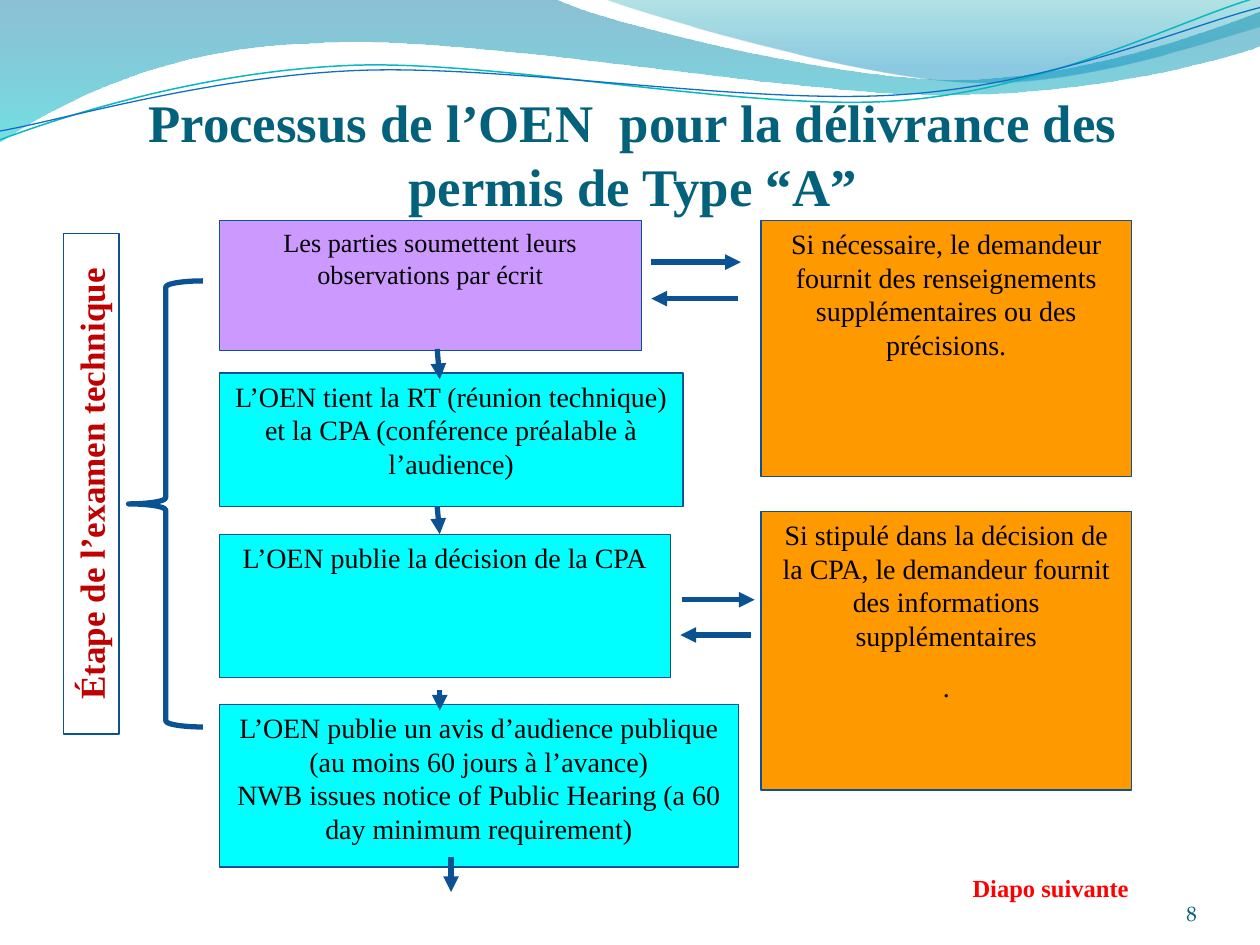
from lxml.etree import SubElement
from pptx import Presentation
from pptx.dml.color import RGBColor
from pptx.enum.shapes import MSO_CONNECTOR, MSO_SHAPE
from pptx.enum.text import MSO_ANCHOR, MSO_AUTO_SIZE, PP_ALIGN
from pptx.oxml.ns import qn
from pptx.util import Inches, Pt

BLUE = RGBColor(0x0B, 0x52, 0x92)
CYAN = RGBColor(0x00, 0xFF, 0xFF)
ORANGE = RGBColor(0xFF, 0x99, 0x00)
PURPLE = RGBColor(0xCC, 0x99, 0xFF)
BLACK = RGBColor(0x00, 0x00, 0x00)
RED = RGBColor(0xFF, 0x00, 0x00)
DARK_RED = RGBColor(0xC0, 0x00, 0x00)
TITLE_TEAL = RGBColor(0x04, 0x61, 0x7B)
NUMBER_TEAL = RGBColor(0x04, 0x5D, 0x75)
WAVE_TOP = RGBColor(0x00, 0x74, 0xA1)
WAVE_BOTTOM = RGBColor(0x00, 0xC6, 0xCF)
CREST_TOP = RGBColor(0x00, 0xA1, 0xA9)
CREST_BOTTOM = RGBColor(0x00, 0x8B, 0xBF)
CURVE_TEAL = RGBColor(0x0A, 0xB8, 0xBF)
CURVE_BLUE = RGBColor(0x0F, 0x6F, 0xC6)


def write(sp, text, size=16, color=BLACK, font="Times New Roman", bold=False,
          align=PP_ALIGN.CENTER, anchor=MSO_ANCHOR.TOP, margins=(0.1, 0.05, 0.1, 0.05),
          after=0):
    tf = sp.text_frame
    tf.word_wrap = True
    tf.auto_size = MSO_AUTO_SIZE.NONE
    tf.vertical_anchor = anchor
    tf.margin_left, tf.margin_top, tf.margin_right, tf.margin_bottom = map(Inches, margins)
    for i, line in enumerate(text.split("\n")):
        p = tf.add_paragraph() if i else tf.paragraphs[0]
        p.alignment = align
        p.space_after = Pt(after)
        r = p.add_run()
        r.text = line
        r.font.name, r.font.size, r.font.bold = font, Pt(size), bold
        r.font.color.rgb = color


def draw_curve(segments, closed):
    """Draw (x, y) points and (x1, y1, x2, y2, x, y) Béziers as one outline."""
    ends = [(Inches(seg[-2]), Inches(seg[-1])) for seg in segments]
    builder = s.shapes.build_freeform(*ends[0])
    builder.add_line_segments(ends[1:], close=closed)
    sp = builder.convert_to_shape()
    sp.shadow.inherit = False
    # Turn the straight steps into cubic ones by putting their control points first
    for step, seg in zip(list(sp._element.iter(qn("a:lnTo"))), segments[1:]):
        if len(seg) == 6:
            step.tag = qn("a:cubicBezTo")
            for i in (0, 2):
                pt = step.makeelement(qn("a:pt"), {"x": str(Inches(seg[i]) - sp.left),
                                                   "y": str(Inches(seg[i + 1]) - sp.top)})
                step.insert(i // 2, pt)
    return sp


prs = Presentation()
prs.slide_width, prs.slide_height = Inches(10), Inches(7.5)
s = prs.slides.add_slide(prs.slide_layouts[5])

# Waves along the top: outline, then (colour, position, opacity) of each stop
waves = [
    ([(0, 0), (4.4, -0.01), (4.76, 0.17, 6.64, 0.63, 7.58, 0.63),
      (8.53, 0.63, 9.58, 0.26, 10, 0.09), (10.01, 0.36),
      (9.83, 0.44, 8.7, 0.76, 7.46, 0.75), (6.22, 0.75, 3.82, 0.28, 2.57, 0.34),
      (1.29, 0.36, 0.46, 0.83, -0.01, 1.13)],
     [(WAVE_TOP, 0, 45), (WAVE_BOTTOM, 1, 55)]),
    ([(4.79, -0.01), (5.09, 0.11, 6.82, 0.62, 7.69, 0.65),
      (8.56, 0.69, 9.61, 0.32, 10, 0.21), (10, 0)],
     [(CREST_TOP, 0, 30), (CREST_BOTTOM, 0.8, 45)]),
]
for outline, stops in waves:
    sp = draw_curve(outline, True)
    sp.line.fill.background()
    sp.fill.gradient()
    sp.fill.gradient_angle = 270
    for stop, (color, position, _) in zip(sp.fill.gradient_stops, stops):
        stop.color.rgb = color
        stop.position = position
    for clr, (_, _, opacity) in zip(sp.fill._xPr.iter(qn("a:srgbClr")), stops):
        SubElement(clr, qn("a:alpha")).set("val", str(opacity * 1000))

curves = [
    ([(0, 1.11), (0.48, 0.93, 1.58, 0.57, 2.77, 0.52), (3.95, 0.47, 5.93, 0.89, 7.13, 0.8),
      (8.33, 0.71, 9.38, 0.15, 9.98, -0.02)], CURVE_TEAL, 0.85),
    ([(0, 1.04), (0.47, 0.96, 1.64, 0.61, 2.83, 0.56), (4.03, 0.51, 5.97, 0.84, 7.17, 0.75),
      (8.36, 0.67, 9.41, 0.21, 10, 0.06)], CURVE_BLUE, 0.75),
]
for outline, color, width in curves:
    sp = draw_curve(outline, False)
    sp.fill.background()
    sp.line.color.rgb = color
    sp.line.width = Pt(width)

title = s.shapes.title
title.left, title.top, title.width, title.height = map(Inches, (0.45, 0.65, 9.1, 1.07))
write(title, "Processus de l’OEN  pour la délivrance des permis de Type “A”", size=30.2,
      color=TITLE_TEAL, bold=True, anchor=MSO_ANCHOR.BOTTOM, margins=(0.2, 0.05, 0.15, 0))

# Steps on the left, the applicant's replies on the right
STEP_X, REPLY_X = 1.74, 6.04
boxes = [
    (STEP_X, 1.75, 3.35, 1.03, PURPLE, 15,
     "Les parties soumettent leurs observations par écrit"),
    (STEP_X, 2.96, 3.68, 1.06, CYAN, 16,
     "L’OEN tient la RT (réunion technique) et la CPA (conférence préalable à l’audience)"),
    (STEP_X, 4.24, 3.58, 1.14, CYAN, 16, "L’OEN publie la décision de la CPA"),
    (STEP_X, 5.59, 4.12, 1.29, CYAN, 16,
     "L’OEN publie un avis d’audience publique (au moins 60 jours à l’avance)\n"
     "NWB issues notice of Public Hearing (a 60 day minimum requirement)"),
    (REPLY_X, 1.75, 2.94, 2.03, ORANGE, 16,
     "Si nécessaire, le demandeur fournit des renseignements supplémentaires ou des "
     "précisions."),
    (REPLY_X, 4.06, 2.94, 2.21, ORANGE, 16,
     "Si stipulé dans la décision de la CPA, le demandeur fournit des informations "
     "supplémentaires\n."),
]
for x, y, w, h, color, size, text in boxes:
    sp = s.shapes.add_shape(MSO_SHAPE.RECTANGLE, *map(Inches, (x, y, w, h)))
    sp.shadow.inherit = False
    sp.fill.solid()
    sp.fill.fore_color.rgb = color
    sp.line.color.rgb = BLUE
    sp.line.width = Pt(0.75)
    write(sp, text, size=size, after=10 if x == REPLY_X else 0)

arrows = [
    (3.47, 2.77, 3.49, 3.01), (3.47, 4.02, 3.49, 4.24),
    (3.49, 5.48, 3.49, 5.64), (3.58, 6.8, 3.58, 7.08),
    (5.17, 2.08, 5.88, 2.08), (5.86, 2.37, 5.17, 2.37),
    (5.41, 4.76, 5.99, 4.76), (5.96, 5.04, 5.4, 5.04),
]
for ends in arrows:
    arrow = s.shapes.add_connector(MSO_CONNECTOR.STRAIGHT, *map(Inches, ends))
    arrow.line.color.rgb = BLUE
    arrow.line.width = Pt(3)
    SubElement(arrow.line._get_or_add_ln(), qn("a:tailEnd")).set("type", "triangle")
    SubElement(arrow._element.spPr, qn("a:effectLst"))

brace = s.shapes.add_shape(MSO_SHAPE.LEFT_BRACE, *map(Inches, (1.02, 2.23, 0.59, 3.54)))
stage = s.shapes.add_shape(MSO_SHAPE.RECTANGLE, *map(Inches, (-1.26, 3.62, 3.97, 0.44)))
stage.rotation = 270
for sp, width in ((brace, 3), (stage, 0.75)):
    sp.shadow.inherit = False
    sp.fill.background()
    sp.line.color.rgb = BLUE
    sp.line.width = Pt(width)
write(stage, "Étape de l’examen technique", size=20, color=DARK_RED, bold=True)

next_slide = s.shapes.add_textbox(*map(Inches, (7.62, 6.88, 2.28, 0.34)))
write(next_slide, "Diapo suivante", size=14, color=RED, bold=True, align=PP_ALIGN.LEFT)

number = s.shapes.add_textbox(*map(Inches, (8.67, 6.95, 0.83, 0.4)))
write(number, "8", size=12, color=NUMBER_TEAL, font="TeX Gyre Pagella",
      align=PP_ALIGN.RIGHT, anchor=MSO_ANCHOR.BOTTOM, margins=(0, 0, 0, 0))

prs.save("out.pptx")
